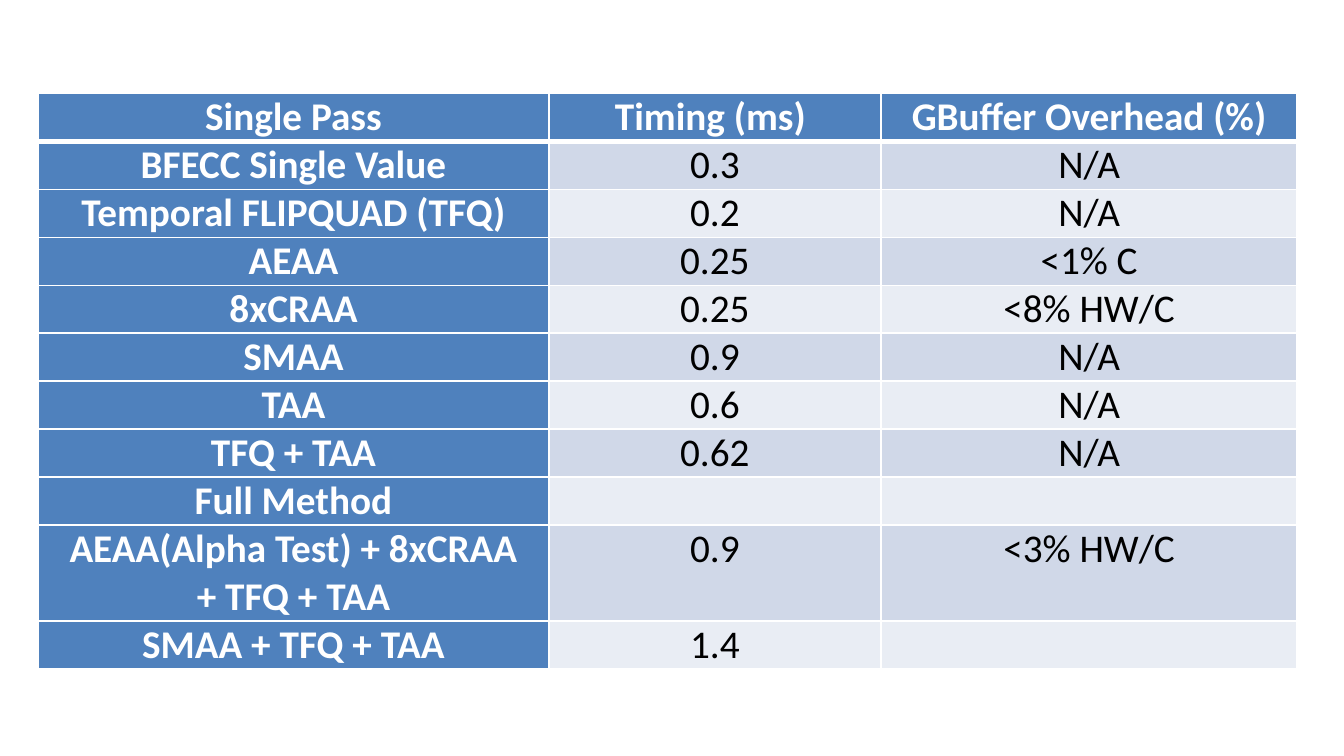
from lxml.etree import SubElement
from pptx import Presentation
from pptx.dml.color import RGBColor
from pptx.enum.text import PP_ALIGN
from pptx.oxml.ns import qn
from pptx.util import Pt

# Content
HEADER = ("Single Pass", "Timing (ms) ", "GBuffer Overhead (%)")
ROWS = [
    ("BFECC Single Value", "0.3", "N/A"),
    ("Temporal FLIPQUAD (TFQ)", "0.2", "N/A"),
    ("AEAA", "0.25", "<1% C"),
    ("8xCRAA", "0.25", "<8% HW/C"),
    ("SMAA", "0.9", "N/A"),
    ("TAA", "0.6", "N/A"),
    ("TFQ + TAA", "0.62", "N/A"),
    ("Full Method", "", ""),
    ("AEAA(Alpha Test) + 8xCRAA + TFQ + TAA", "0.9", "<3% HW/C"),
    ("SMAA + TFQ + TAA", "1.4", ""),
]
TWO_LINE_ROW = 9

# Format
WHITE = RGBColor(0xFF, 0xFF, 0xFF)
BLACK = RGBColor(0x00, 0x00, 0x00)
BLUE = RGBColor(0x4F, 0x81, 0xBD)
BANDS = (RGBColor(0xE9, 0xED, 0xF4), RGBColor(0xD0, 0xD8, 0xE8))
LEFT, TOP = 20.5, 50
COL_WIDTHS = (273.5, 178, 223)
ROW_HEIGHT = 25.5
MARGINS = {"margin_left": Pt(11.5), "margin_right": Pt(11.5),
           "margin_top": Pt(0), "margin_bottom": Pt(0)}
FONT = {"name": "Calibri", "size": Pt(21)}


def set_borders(cell, top, bottom):
    tc_pr = cell._tc.get_or_add_tcPr()
    for side, width in (("L", 1), ("R", 1), ("T", top), ("B", bottom)):
        ln = SubElement(tc_pr, qn(f"a:ln{side}"), w=str(Pt(width)))
        fill = SubElement(ln, qn("a:solidFill"))
        SubElement(fill, qn("a:srgbClr"), val=str(WHITE))


def format_cell(cell, text, row, col):
    is_heading = row == 0 or col == 0
    for name, value in MARGINS.items():
        setattr(cell, name, value)
    set_borders(cell, 3 if row == 1 else 1, 3 if row == 0 else 1)
    cell.fill.solid()
    cell.fill.fore_color.rgb = BLUE if is_heading else BANDS[row % 2]
    p = cell.text_frame.paragraphs[0]
    p.alignment = PP_ALIGN.CENTER
    if text:
        r = p.add_run()
        r.text = text
        for name, value in {**FONT, "bold": is_heading}.items():
            setattr(r.font, name, value)
        r.font.color.rgb = WHITE if is_heading else BLACK


prs = Presentation()
prs.slide_width, prs.slide_height = Pt(720), Pt(405)
s = prs.slides.add_slide(prs.slide_layouts[6])

# Timing table
grid = [HEADER, *ROWS]
heights = [ROW_HEIGHT * (2 if i == TWO_LINE_ROW else 1) for i in range(len(grid))]
table = s.shapes.add_table(len(grid), len(HEADER), Pt(LEFT), Pt(TOP),
                           Pt(sum(COL_WIDTHS)), Pt(sum(heights))).table
table.first_col = True
for column, width in zip(table.columns, COL_WIDTHS):
    column.width = Pt(width)
for i, (values, height) in enumerate(zip(grid, heights)):
    table.rows[i].height = Pt(height)
    for j, text in enumerate(values):
        format_cell(table.cell(i, j), text, i, j)

prs.save("out.pptx")
